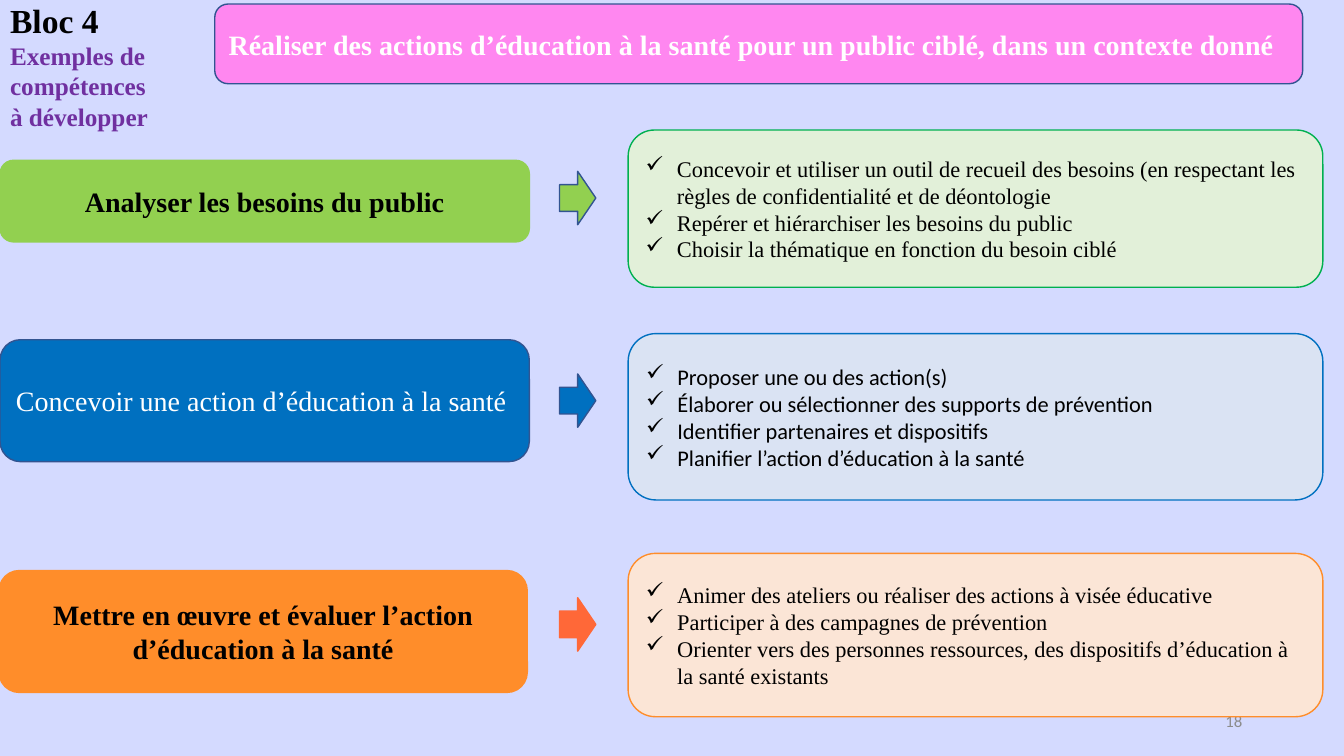
from pptx import Presentation
from pptx.dml.color import RGBColor as Rgb
from pptx.enum.shapes import MSO_SHAPE as Kind
from pptx.enum.text import MSO_ANCHOR as Anchor, MSO_AUTO_SIZE as Fit, PP_ALIGN as Align
from pptx.oxml.ns import qn
from pptx.util import Pt
from lxml.etree import SubElement as Sub

PX = 9144
SERIF = "Times New Roman"
SANS = "Calibri"
HUES = {
    "back": "D4DAFF", "black": "000000", "white": "FFFFFF", "gray": "8C8C8C",
    "violet": "7030A0", "navy": "325491", "pink": "FF87F0",
    "lime": "92D050", "green": "00B050", "mint": "E2F0D9",
    "blue": "0070C0", "sky": "DAE3F3",
    "orange": "FF8D2A", "coral": "FF6838", "peach": "FBE5D6",
}


class Deck:
    def __init__(self, wide, high):
        self.file = Presentation()
        self.file.slide_width = wide * PX
        self.file.slide_height = high * PX
        self.slide = self.file.slides.add_slide(self.file.slide_layouts[5])
        self.paint(self.slide.background.fill, "back")

    def paint(self, fill, hue):
        fill.solid()
        fill.fore_color.rgb = Rgb.from_string(HUES[hue])

    def style(self, para, size, hue, bold=False, face=SERIF, align=Align.LEFT):
        para.alignment = align
        for run in para.runs:
            font = run.font
            font.name, font.size, font.bold = face, Pt(size), bold
            font.color.rgb = Rgb.from_string(HUES[hue])

    def title(self, box, head, lines):
        shape = self.slide.shapes.title
        shape.left, shape.top, shape.width, shape.height = (n * PX for n in box)
        frame = shape.text_frame
        frame.text = "\n".join([head, *lines])
        frame.word_wrap, frame.auto_size = True, Fit.NONE
        frame.vertical_anchor = Anchor.TOP
        frame.margin_left, frame.margin_right = 10 * PX, 8 * PX
        frame.margin_top = frame.margin_bottom = 0
        first, *rest = frame.paragraphs
        self.style(first, 24, "black", True)
        for para in rest:
            self.style(para, 18, "violet", True)

    def number(self, box, text):
        frame = self.slide.shapes.add_textbox(*(n * PX for n in box)).text_frame
        frame.text = text
        frame.word_wrap, frame.vertical_anchor = True, Anchor.MIDDLE
        self.style(frame.paragraphs[0], 12, "gray", face=SANS, align=Align.RIGHT)

    def shape(self, kind, box, fill, line):
        shape = self.slide.shapes.add_shape(kind, *(n * PX for n in box))
        shape.shadow.inherit = False
        self.paint(shape.fill, fill)
        self.paint(shape.line.fill, line)
        shape.line.width = Pt(1)
        return shape

    def arrow(self, box, fill, line):
        self.shape(Kind.RIGHT_ARROW, box, fill, line)

    def panel(self, box, fill, line, text, size, hue, **look):
        frame = self.shape(Kind.ROUNDED_RECTANGLE, box, fill, line).text_frame
        frame.text = text
        frame.word_wrap, frame.vertical_anchor = True, Anchor.MIDDLE
        for para in frame.paragraphs:
            self.style(para, size, hue, **look)
        return frame.paragraphs

    def checks(self, box, fill, line, items, face):
        text = "\n".join(items)
        for para in self.panel(box, fill, line, text, 16, "black", face=face):
            props = para._p.get_or_add_pPr()
            props.set("marL", str(31 * PX))
            props.set("indent", str(-31 * PX))
            Sub(props, qn("a:buChar")).set("char", "✓")


def main():
    deck = Deck(1333, 750)
    deck.title((0, 0, 1333, 131), "Bloc 4",
               ["Exemples de", "compétences", "à développer"])
    deck.number((942, 695, 300, 40), "18")

    strong = {"bold": True, "align": Align.CENTER}
    need = deck.panel((0, 159, 525, 81), "lime", "lime",
                      "Analyser les besoins du public", 20, "black", **strong)
    need[0].space_after = Pt(18)
    deck.panel((0, 337, 525, 121), "blue", "navy",
               "Concevoir une action d’éducation à la santé", 20, "white")
    deck.panel((-1, 566, 524, 121), "orange", "orange",
               "Mettre en œuvre et évaluer l’action d’éducation à la santé",
               20, "black", **strong)

    arrows = [(170, "lime", "navy"), (371, "blue", "navy"), (593, "coral", "coral")]
    for top, fill, line in arrows:
        deck.arrow((555, top, 36, 53), fill, line)

    lists = [
        (129, 156, "mint", "green", SERIF, [
            "Concevoir et utiliser un outil de recueil des besoins "
            "(en respectant les règles de confidentialité et de déontologie",
            "Repérer et hiérarchiser les besoins du public",
            "Choisir la thématique en fonction du besoin ciblé"]),
        (331, 165, "sky", "blue", SANS, [
            "Proposer une ou des action(s)",
            "Élaborer ou sélectionner des supports de prévention",
            "Identifier partenaires et dispositifs",
            "Planifier l’action d’éducation à la santé"]),
        (549, 162, "peach", "orange", SERIF, [
            "Animer des ateliers ou réaliser des actions à visée éducative",
            "Participer à des campagnes de prévention",
            "Orienter vers des personnes ressources, des dispositifs "
            "d’éducation à la santé existants"]),
    ]
    for top, high, fill, line, face, items in lists:
        deck.checks((623, top, 689, high), fill, line, items, face)

    deck.panel((213, 4, 1079, 79), "pink", "navy",
               "Réaliser des actions d’éducation à la santé pour un public ciblé, "
               "dans un contexte donné", 20, "white", bold=True)
    deck.file.save("out.pptx")


if __name__ == "__main__":
    main()
